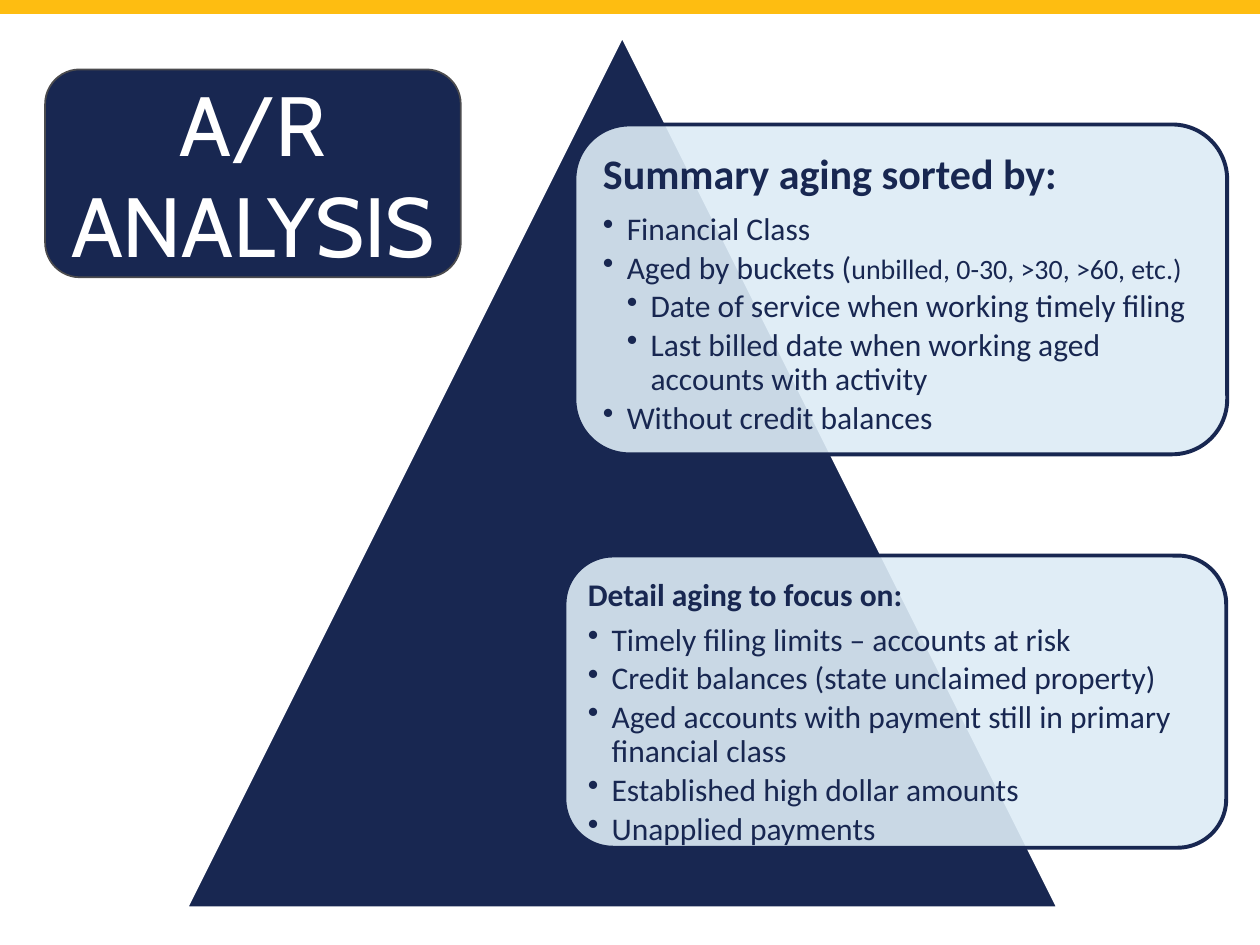
from lxml import etree
from pptx import Presentation
from pptx.dml.color import RGBColor
from pptx.enum.shapes import MSO_SHAPE
from pptx.enum.text import MSO_ANCHOR, PP_ALIGN
from pptx.oxml.ns import qn
from pptx.util import Cm, Pt

NAVY = RGBColor(0x18, 0x27, 0x51)
PALE = RGBColor(0xDD, 0xEC, 0xF6)
GOLD = RGBColor(0xFE, 0xBD, 0x11)
GREY = RGBColor(0x4B, 0x4B, 0x4E)
WHITE = RGBColor(0xFF, 0xFF, 0xFF)

RECT = MSO_SHAPE.RECTANGLE
ROUND = MSO_SHAPE.ROUNDED_RECTANGLE
PEAK = MSO_SHAPE.ISOSCELES_TRIANGLE
CENTER = PP_ALIGN.CENTER
MIDDLE = MSO_ANCHOR.MIDDLE
TOP = MSO_ANCHOR.TOP

INDENT = 0.48   # cm per bullet level
CORNER = 0.049  # text inset that clears a round corner, per panel height

# Each item: level, then (text, size) runs
SUMMARY = [
    (1, [("Financial Class", 18)]),
    (1, [("Aged by buckets (", 18), ("unbilled, 0-30, >30, >60, etc.)", 16)]),
    (2, [("Date of service when working timely filing", 18)]),
    (2, [("Last billed date when working aged accounts with activity", 18)]),
    (1, [("Without credit balances", 18)]),
]
DETAIL = [(1, [(text, 18)]) for text in (
    "Timely filing limits – accounts at risk",
    "Credit balances (state unclaimed property)",
    "Aged accounts with payment still in primary financial class",
    "Established high dollar amounts",
    "Unapplied payments",
)]


def add_block(slide, kind, box, fill, line=None, width=1):
    """Add a flat filled shape, with an outline if a line colour is given."""
    shape = slide.shapes.add_shape(kind, *map(Cm, box))
    shape.shadow.inherit = False
    shape.fill.solid()
    shape.fill.fore_color.rgb = fill
    if line is None:
        shape.line.fill.background()
    else:
        shape.line.color.rgb = line
        shape.line.width = Pt(width)
    return shape


def set_alpha(shape, percent):
    color = shape._element.spPr.find(qn("a:solidFill"))[0]
    etree.SubElement(color, qn("a:alpha"), val=str(percent * 1000))


def add_line(para, level, runs, after, bold=False):
    """Fill one paragraph; level 0 is a heading, others are bullets."""
    para.line_spacing = 0.9
    props = para._p.get_or_add_pPr()
    space = etree.SubElement(props, qn("a:spcAft"))
    etree.SubElement(space, qn("a:spcPct"), val=str(after * 1000))
    if level:
        para.level = level
        props.set("marL", str(Cm(INDENT * level)))
        props.set("indent", str(-Cm(INDENT)))
        etree.SubElement(props, qn("a:buChar"), char="•")
    para.font.name = "Calibri"
    para.font.bold = bold
    para.font.color.rgb = NAVY
    para.font.size = Pt(runs[0][1])
    for text, size in runs:
        run = para.add_run()
        run.text = text
        if size != runs[0][1]:
            run.font.size = Pt(size)


def add_panel(slide, box, head, size, items, pad):
    """Add a see-through panel with a heading and bullets."""
    left, top, width, height = box
    set_alpha(add_block(slide, ROUND, box, PALE, NAVY, 2.25), 90)
    gap = CORNER * height
    area = (left + gap, top + gap, width - 2 * gap, height - 2 * gap)
    frame = slide.shapes.add_textbox(*map(Cm, area)).text_frame
    frame.word_wrap = True
    frame.vertical_anchor = TOP
    frame.margin_left = frame.margin_right = Cm(pad)
    frame.margin_top = frame.margin_bottom = Cm(pad)
    add_line(frame.paragraphs[0], 0, [(head, size)], 35, bold=True)
    for level, runs in items:
        add_line(frame.add_paragraph(), level, runs, 15)


def add_title(slide, box, text):
    frame = add_block(slide, ROUND, box, NAVY, GREY).text_frame
    frame.word_wrap = True
    frame.vertical_anchor = MIDDLE
    para = frame.paragraphs[0]
    para.text = text
    para.alignment = CENTER
    para.font.name = "Cabin"
    para.font.size = Pt(48)
    para.font.color.rgb = WHITE


def main():
    deck = Presentation()
    deck.slide_width, deck.slide_height = Cm(25.4), Cm(19.05)
    slide = deck.slides.add_slide(deck.slide_layouts[6])

    # Top band and pyramid
    add_block(slide, RECT, (0, 0, 25.4, 0.28), GOLD)
    add_block(slide, PEAK, (3.78, 0.76, 17.53, 17.53), NAVY, WHITE)

    # Text panels
    add_panel(slide, (11.58, 2.51, 13.16, 6.65),
              "Summary aging sorted by:", 24, SUMMARY, 0.25)
    add_panel(slide, (11.38, 11.2, 13.34, 5.89),
              "Detail aging to focus on:", 18, DETAIL, 0.18)

    # Title
    add_title(slide, (0.91, 1.4, 8.38, 4.19), "A/R ANALYSIS")
    deck.save("out.pptx")


if __name__ == "__main__":
    main()
